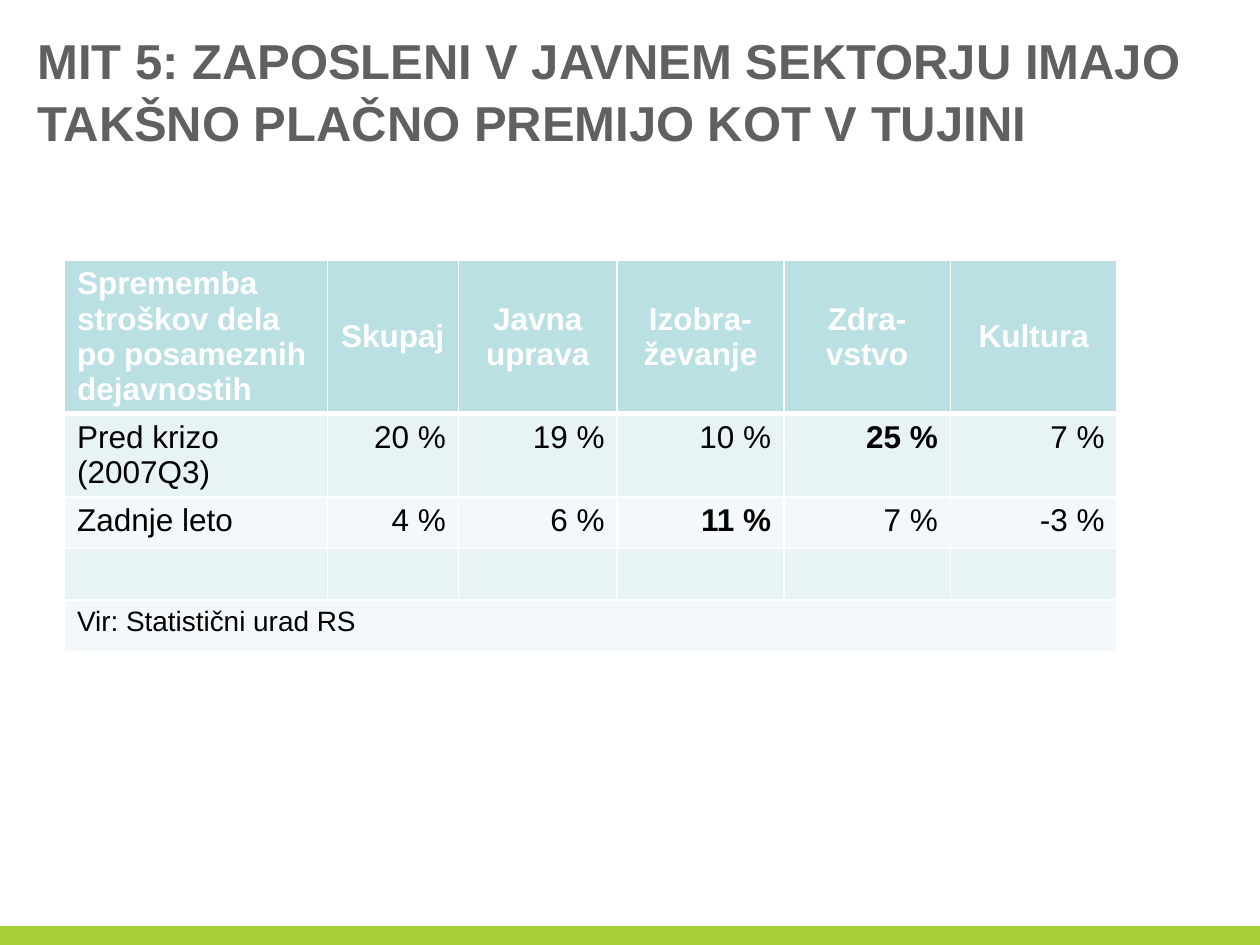
"""Builds a slide with a table of labour cost changes by public activity."""
import pptx
import pptx.dml.color
import pptx.enum.shapes
import pptx.enum.text
import pptx.oxml
import pptx.oxml.ns
import pptx.util

Cm = pptx.util.Cm
Pt = pptx.util.Pt
RGB = pptx.dml.color.RGBColor
ALIGN = pptx.enum.text.PP_ALIGN
ANCHOR = pptx.enum.text.MSO_ANCHOR

TITLE = "MIT 5: ZAPOSLENI V JAVNEM SEKTORJU IMAJO TAKŠNO PLAČNO PREMIJO KOT V TUJINI"
ROWS = [
    ["Sprememba stroškov dela po posameznih dejavnostih", "Skupaj",
     "Javna uprava", "Izobra-ževanje", "Zdra-vstvo", "Kultura"],
    ["Pred krizo (2007Q3)", "20 %", "19 %", "10 %", "25 %", "7 %"],
    ["Zadnje leto", "4 %", "6 %", "11 %", "7 %", "-3 %"],
    [""] * 6,
    ["Vir: Statistični urad RS"] + [""] * 5,
]
BOLD = {(1, 4), (2, 3)}
WIDTHS = [5.3, 2.64, 3.2, 3.36, 3.36, 3.36]
HEIGHT = 1.04

FONT = "Arial"
WHITE = RGB(0xFF, 0xFF, 0xFF)
BLACK = RGB(0x00, 0x00, 0x00)
GRAY = RGB(0x60, 0x60, 0x60)
GREEN = RGB(0xA6, 0xCE, 0x39)
TEAL = RGB(0xBB, 0xE0, 0xE3)
BANDS = [RGB(0xF3, 0xF9, 0xFA), RGB(0xE7, 0xF3, 0xF4)]


def style(para, size, color, bold, align):
    para.alignment = align
    font = para.font
    font.name, font.size, font.bold = FONT, Pt(size), bold
    font.color.rgb = color


def edge(cell, side, width):
    cell._tc.get_or_add_tcPr().append(pptx.oxml.parse_xml(
        f'<a:ln{side} {pptx.oxml.ns.nsdecls("a")} w="{Pt(width)}"><a:solidFill>'
        f'<a:srgbClr val="{WHITE}"/></a:solidFill></a:ln{side}>'))


def dress(cell, row, col):
    head = row == 0
    cell.text = ROWS[row][col]
    cell.vertical_anchor = ANCHOR.MIDDLE if head and col else ANCHOR.TOP
    align = ALIGN.LEFT if col == 0 else ALIGN.CENTER if head else ALIGN.RIGHT
    size = 16 if row == len(ROWS) - 1 else 18
    style(cell.text_frame.paragraphs[0], size, WHITE if head else BLACK,
          head or (row, col) in BOLD, align)
    for side in "LRTB":
        thick = (row, side) in {(0, "B"), (1, "T")}
        edge(cell, side, 3 if thick else 1)
    cell.fill.solid()
    cell.fill.fore_color.rgb = TEAL if head else BANDS[row % 2]


def main():
    deck = pptx.Presentation()
    deck.slide_width, deck.slide_height = Cm(25.4), Cm(19.05)
    slide = deck.slides.add_slide(deck.slide_layouts[5])
    shapes = slide.shapes

    title = shapes.title
    title.left, title.top, title.width, title.height = Cm(0.5), Cm(0.91), Cm(24), Cm(1.8)
    frame = title.text_frame
    frame.text = TITLE
    frame.word_wrap = True
    frame.auto_size = pptx.enum.text.MSO_AUTO_SIZE.NONE
    frame.vertical_anchor = ANCHOR.MIDDLE
    para = frame.paragraphs[0]
    style(para, 28, GRAY, True, ALIGN.LEFT)
    para.line_spacing = 1.05

    bar = shapes.add_shape(pptx.enum.shapes.MSO_SHAPE.RECTANGLE,
                           0, Cm(18.67), deck.slide_width, Cm(0.38))
    bar.shadow.inherit = False
    bar.fill.solid()
    bar.fill.fore_color.rgb = GREEN
    bar.line.fill.background()

    table = shapes.add_table(len(ROWS), len(WIDTHS), Cm(1.3), Cm(5.24),
                             Cm(sum(WIDTHS)), Cm(HEIGHT * len(ROWS))).table
    for col, width in enumerate(WIDTHS):
        table.columns[col].width = Cm(width)
    for row in range(len(ROWS)):
        for col in range(len(WIDTHS)):
            dress(table.cell(row, col), row, col)
    last = len(ROWS) - 1
    table.cell(last, 0).merge(table.cell(last, len(WIDTHS) - 1))

    deck.save("out.pptx")


if __name__ == "__main__":
    main()
